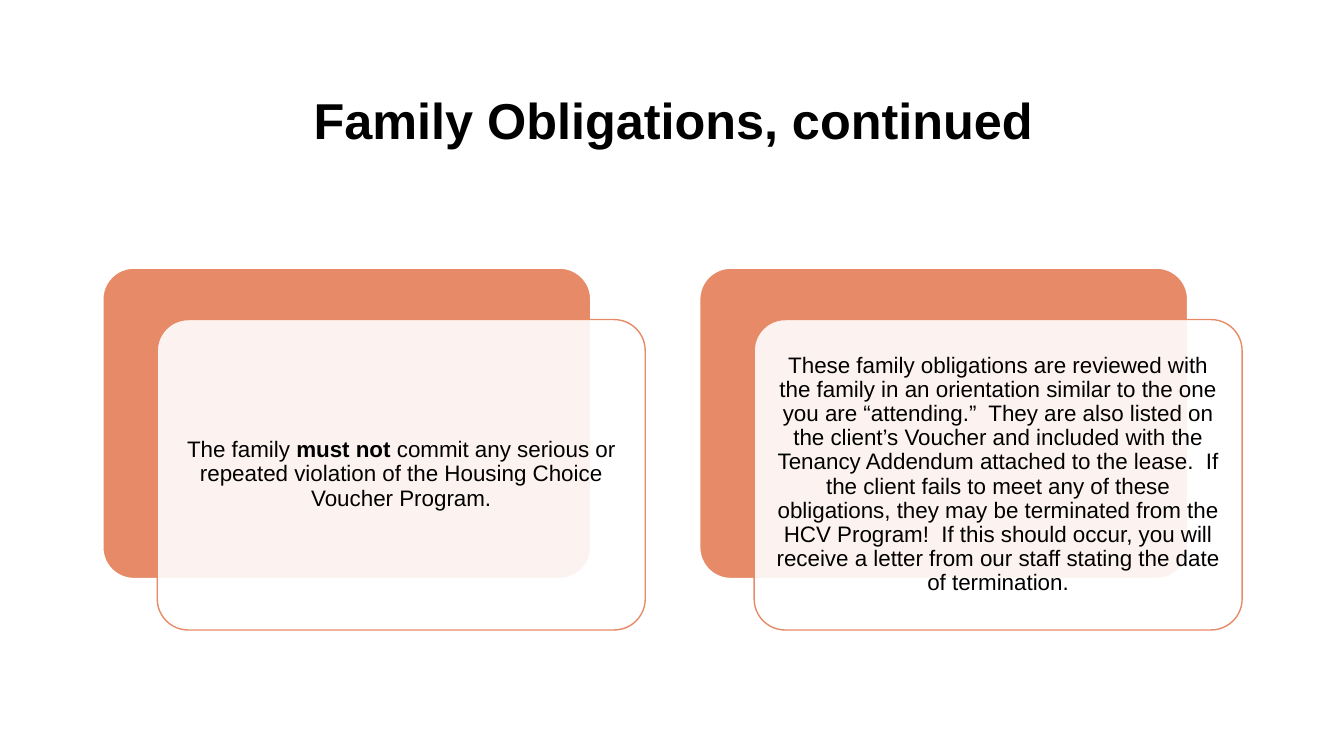
from lxml import etree
from pptx import Presentation
from pptx import util as u
from pptx.dml.color import RGBColor
from pptx.enum import shapes, text
from pptx.oxml.ns import qn

PX = 9144  # 100 px to the inch
FONT = "Arial"
BLACK, WHITE, ORANGE = "000000", "FFFFFF", "E78A67"

CARD_TOP, CARD_LEFT, CARD_PITCH = 266, 102, 592
PANEL_W, PANEL_H = 484, 308
FRONT_DX, FRONT_DY = 54, 51
TEXT_MARGIN, TEXT_INSET = 9, 7

OBLIGATIONS = [
    [("The family ", False), ("must not", True),
     (" commit any serious or repeated violation of the Housing Choice "
      "Voucher Program.", False)],
    [("These family obligations are reviewed with the family in an orientation "
      "similar to the one you are “attending.”  They are also listed on the "
      "client’s Voucher and included with the Tenancy Addendum attached to the "
      "lease.  If the client fails to meet any of these obligations, they may be "
      "terminated from the HCV Program!  If this should occur, you will receive "
      "a letter from our staff stating the date of termination.", False)],
]


def color(hex_code):
    return RGBColor.from_string(hex_code)


def px(*lengths):
    return [u.Emu(length * PX) for length in lengths]


def add_text(slide, box, runs, size, inset):
    """Add one centred paragraph; runs are (wording, bold) pairs."""
    frame = slide.shapes.add_textbox(*px(*box)).text_frame
    frame.word_wrap = True
    frame.vertical_anchor = text.MSO_ANCHOR.MIDDLE
    (frame.margin_left, frame.margin_top,
     frame.margin_right, frame.margin_bottom) = px(*[inset] * 4)
    paragraph = frame.paragraphs[0]
    paragraph.alignment = text.PP_ALIGN.CENTER
    paragraph.line_spacing = 0.9
    for wording, bold in runs:
        run = paragraph.add_run()
        run.text = wording
        run.font.name = FONT
        run.font.size = u.Pt(size)
        run.font.bold = bold
        run.font.color.rgb = color(BLACK)


def add_panel(slide, box, fill, line, opacity=100):
    panel = slide.shapes.add_shape(
        shapes.MSO_SHAPE.ROUNDED_RECTANGLE, *px(*box))
    panel.adjustments[0] = 0.1
    panel.shadow.inherit = False
    panel.fill.solid()
    panel.fill.fore_color.rgb = color(fill)
    panel.line.color.rgb = color(line)
    panel.line.width = u.Pt(1)
    if opacity < 100:
        fill_color = panel.fill._xPr.find(qn("a:solidFill"))[0]
        etree.SubElement(fill_color, qn("a:alpha"), val=str(opacity * 1000))


def add_card(slide, left, top, runs):
    """Place a solid back panel, a translucent front panel and its text."""
    add_panel(slide, (left, top, PANEL_W, PANEL_H), ORANGE, WHITE)
    left, top = left + FRONT_DX, top + FRONT_DY
    add_panel(slide, (left, top, PANEL_W, PANEL_H), WHITE, ORANGE, opacity=90)
    text_box = (left + TEXT_MARGIN, top + TEXT_MARGIN,
                PANEL_W - 2 * TEXT_MARGIN, PANEL_H - 2 * TEXT_MARGIN)
    add_text(slide, text_box, runs, 16, TEXT_INSET)


def main():
    deck = Presentation()
    deck.slide_width, deck.slide_height = px(1333, 750)
    slide = deck.slides.add_slide(deck.slide_layouts[6])
    add_text(slide, (167, 60, 1002, 124),
             [("Family Obligations, continued", True)], 36, 10)
    for index, runs in enumerate(OBLIGATIONS):
        add_card(slide, CARD_LEFT + index * CARD_PITCH, CARD_TOP, runs)
    deck.save("out.pptx")


if __name__ == "__main__":
    main()
